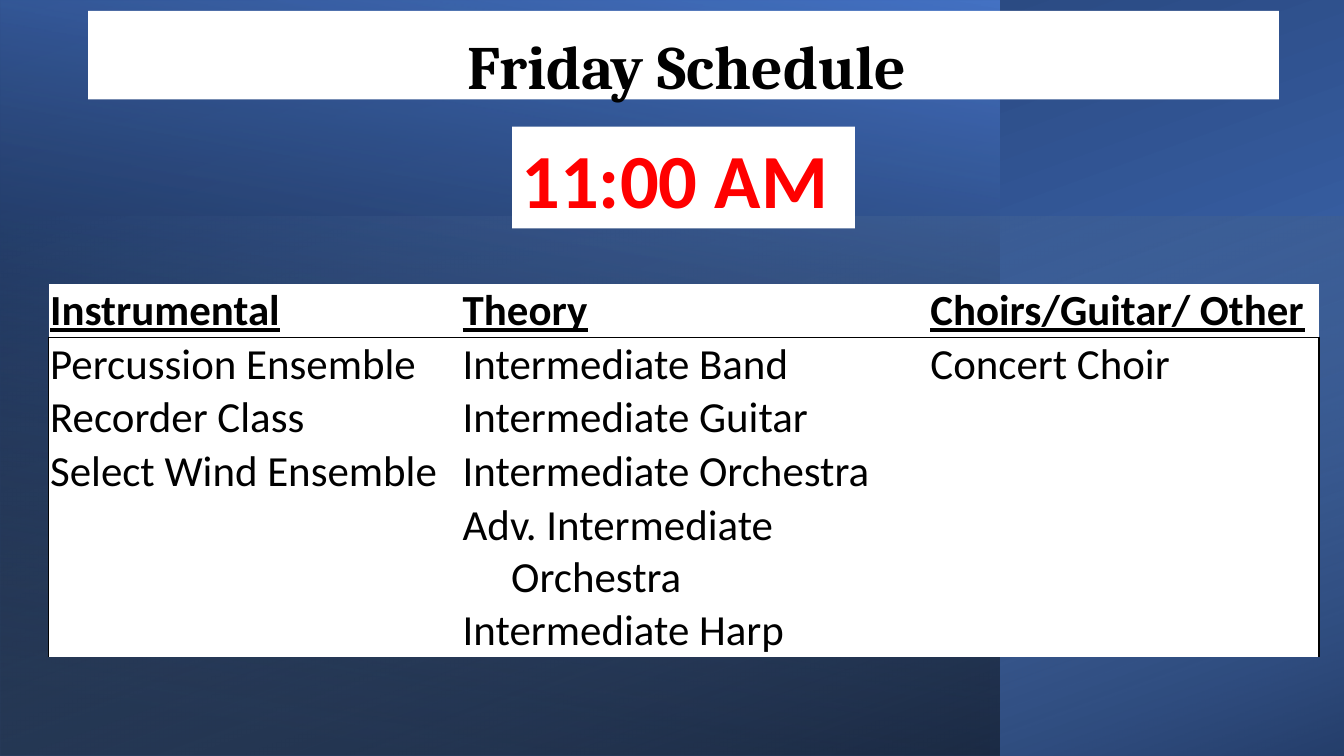
"""Build the Friday schedule slide."""
from dataclasses import dataclass
from typing import Any

from lxml.etree import SubElement
from pptx import Presentation
from pptx.dml.color import RGBColor as Rgb
from pptx.enum.shapes import MSO_SHAPE as Preset
from pptx.enum.text import MSO_ANCHOR as Anchor, MSO_AUTO_SIZE as AutoSize, PP_ALIGN as Align
from pptx.oxml.ns import qn
from pptx.util import Pt

COLORS = {"white": "FFFFFF", "black": "000000", "red": "FF0000",
          "blue": "4472C4", "navy": "1F3864", "sky": "9CC2E5"}
BOX_FORMAT = {"margin_left": Pt(5), "margin_right": Pt(5), "margin_top": Pt(3),
              "margin_bottom": Pt(3), "vertical_anchor": Anchor.TOP,
              "auto_size": AutoSize.NONE, "word_wrap": True}
CELL_FORMAT = {"margin_left": Pt(0.7), "margin_right": Pt(0.7), "margin_top": Pt(0.5),
               "margin_bottom": Pt(0), "vertical_anchor": Anchor.BOTTOM}
HEADER_FONT = {"name": "Calibri", "size": Pt(23), "bold": True, "underline": True}
BODY_FONT = HEADER_FONT | {"bold": False, "underline": False}
LINE = 28
COLUMN_WIDTHS = (221, 250.6, 208.8)
SCHEDULE = (
    ("Instrumental", "Theory", "Choirs/Guitar/ Other"),
    ("Percussion Ensemble", "Intermediate Band", "Concert Choir"),
    ("Recorder Class", "Intermediate Guitar", ""),
    ("Select Wind Ensemble", "Intermediate Orchestra", ""),
    ("", "Adv. Intermediate\nOrchestra\nIntermediate Harp", ""),
)
CONTINUATION = "Orchestra"


@dataclass(frozen=True)
class Stop:
    position: int
    color: str
    alpha: int = 100


@dataclass(frozen=True)
class Backdrop:
    left: float
    top: float
    width: float
    height: float
    rotation: int
    angle: int
    stops: tuple[Stop, ...]


BACKDROPS = (
    Backdrop(157.5, -157.5, 405, 720, 270, 200,
             (Stop(0, "blue"), Stop(8, "blue"), Stop(100, "navy"))),
    Backdrop(0, 0, 535.7, 405, 180, 80,
             (Stop(0, "black", 52), Stop(8, "black", 52), Stop(100, "blue"))),
    Backdrop(215.5, -99.5, 289, 720, 270, 20,
             (Stop(0, "sky", 0), Stop(100, "black", 46))),
)


def apply(target: Any, values: dict[str, Any]) -> None:
    for name, value in values.items():
        setattr(target, name, value)


def paint(owner: Any, color: str) -> None:
    owner.fill.solid()
    owner.fill.fore_color.rgb = Rgb.from_string(COLORS[color])


def write(paragraph: Any, words: str, font: dict[str, Any], color: str) -> None:
    run = paragraph.add_run()
    run.text = words
    apply(run.font, font)
    run.font.color.rgb = Rgb.from_string(COLORS[color])


def draw_backdrop(slide: Any, backdrop: Backdrop) -> None:
    panel = slide.shapes.add_shape(
        Preset.RECTANGLE, Pt(backdrop.left), Pt(backdrop.top),
        Pt(backdrop.width), Pt(backdrop.height))
    panel.rotation = backdrop.rotation
    panel.shadow.inherit = False
    panel.line.fill.background()
    panel.fill.gradient()
    properties = panel.element.spPr
    properties.find(qn("a:xfrm")).set("flipH", "1")
    gradient = properties.find(qn("a:gradFill"))
    for child in list(gradient):
        gradient.remove(child)
    stop_list = SubElement(gradient, qn("a:gsLst"))
    for stop in backdrop.stops:
        mark = SubElement(stop_list, qn("a:gs"), pos=str(stop.position * 1000))
        tint = SubElement(mark, qn("a:srgbClr"), val=COLORS[stop.color])
        if stop.alpha < 100:
            SubElement(tint, qn("a:alpha"), val=str(stop.alpha * 1000))
    SubElement(gradient, qn("a:lin"), ang=str(backdrop.angle * 60000), scaled="0")


def draw_title(slide: Any) -> None:
    title = slide.shapes.title
    slide.shapes.element.append(title.element)
    apply(title, {"left": Pt(47.2), "top": Pt(5.8), "width": Pt(638), "height": Pt(47.4)})
    paint(title, "white")
    apply(title.text_frame, BOX_FORMAT)
    heading = title.text_frame.paragraphs[0]
    apply(heading, {"alignment": Align.CENTER, "line_spacing": 1.15})
    heading._p.get_or_add_pPr().set("marL", str(Pt(4)))
    write(heading, "Friday Schedule", {"name": "Cambria", "size": Pt(33), "bold": True}, "black")


def draw_time(slide: Any) -> None:
    time = slide.shapes.add_textbox(Pt(274.4), Pt(67.8), Pt(183.6), Pt(54.5))
    paint(time, "white")
    apply(time.text_frame, BOX_FORMAT)
    write(time.text_frame.paragraphs[0], "11:00 AM",
          {"name": "Calibri", "size": Pt(41), "bold": True}, "red")


def set_borders(cell: Any, ruled: dict[str, bool]) -> None:
    properties = cell._tc.get_or_add_tcPr()
    for index, (side, visible) in enumerate(ruled.items()):
        border = SubElement(properties, qn(f"a:{side}"), w=str(Pt(0.75)))
        properties.insert(index, border)
        if visible:
            SubElement(SubElement(border, qn("a:solidFill")), qn("a:srgbClr"),
                       val=COLORS["black"])
        else:
            SubElement(border, qn("a:noFill"))


def fill_cell(cell: Any, words: str, font: dict[str, Any]) -> None:
    paint(cell, "white")
    apply(cell, CELL_FORMAT)
    for index, entry in enumerate(words.split("\n") if words else ()):
        frame = cell.text_frame
        paragraph = frame.add_paragraph() if index else frame.paragraphs[0]
        write(paragraph, entry, font, "black")
        if entry == CONTINUATION:
            paragraph._p.get_or_add_pPr().set("marL", str(Pt(26)))


def draw_schedule(slide: Any) -> None:
    heights = [LINE * max(words.count("\n") + 1 for words in row) for row in SCHEDULE]
    table = slide.shapes.add_table(
        len(SCHEDULE), len(COLUMN_WIDTHS), Pt(26.2), Pt(152),
        Pt(sum(COLUMN_WIDTHS)), Pt(sum(heights))).table
    apply(table, {"first_row": False, "horz_banding": False})
    for column, width in zip(table.columns, COLUMN_WIDTHS):
        column.width = Pt(width)
    last = len(COLUMN_WIDTHS) - 1
    for r, (row, height) in enumerate(zip(SCHEDULE, heights)):
        table.rows[r].height = Pt(height)
        for c, words in enumerate(row):
            cell = table.cell(r, c)
            fill_cell(cell, words, BODY_FONT if r else HEADER_FONT)
            set_borders(cell, {"lnL": r > 0 and c == 0, "lnR": r > 0 and c == last,
                               "lnT": r == 1, "lnB": r == 0})


def main() -> None:
    deck = Presentation()
    apply(deck, {"slide_width": Pt(720), "slide_height": Pt(405)})
    slide = deck.slides.add_slide(deck.slide_layouts.get_by_name("Title Only"))
    for backdrop in BACKDROPS:
        draw_backdrop(slide, backdrop)
    draw_title(slide)
    draw_time(slide)
    draw_schedule(slide)
    deck.save("out.pptx")


if __name__ == "__main__":
    main()
